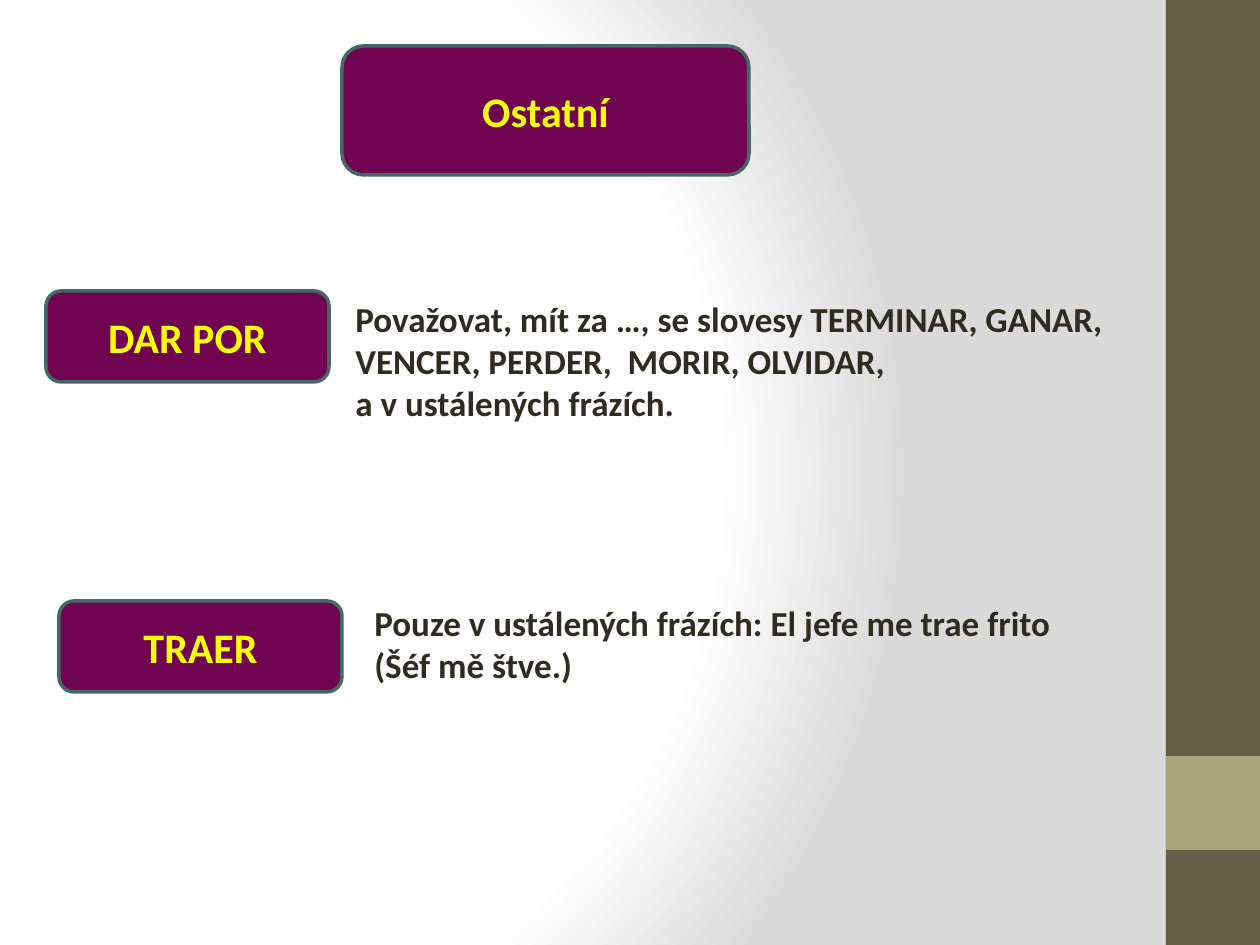
from lxml.etree import fromstring
from pptx import Presentation
from pptx.dml.color import RGBColor
from pptx.enum.shapes import MSO_SHAPE
from pptx.enum.text import MSO_ANCHOR, MSO_AUTO_SIZE, PP_ALIGN
from pptx.oxml.ns import nsdecls
from pptx.util import Pt

SCALE = 914400 / 126  # EMU per px
HUES = {
    "plum": "700451", "edge": "456867", "gold": "FFFF00", "ink": "2F2B20",
    "bark": "675E47", "moss": "A9A57C", "white": "FFFFFF", "gray": "DADADA",
}


def emu(*nums):
    return [round(n * SCALE) for n in nums]


def rgb(name):
    return RGBColor.from_string(HUES[name])


def write(frame, text, size=20, hue="ink", align=PP_ALIGN.LEFT):
    """Fill a text frame, one paragraph per line of text."""
    frame.text = text
    for para in frame.paragraphs:
        para.alignment = align
        for run in para.runs:
            font = run.font
            font.name, font.size, font.bold = "Calibri", Pt(size), True
            font.color.rgb = rgb(hue)


class Deck:
    def __init__(self, wide, high):
        self.prs = Presentation()
        self.prs.slide_width, self.prs.slide_height = emu(wide, high)
        self.slide = self.prs.slides.add_slide(self.prs.slide_layouts[6])

    def glow(self, stops, left, top, right, bottom):
        """Radial background; stops and focus are in percent."""
        marks = "".join(
            f'<a:gs pos="{pos * 1000}"><a:srgbClr val="{HUES[hue]}"/></a:gs>'
            for pos, hue in stops)
        back = fromstring(
            f'<p:bg {nsdecls("p", "a")}><p:bgPr><a:gradFill rotWithShape="1">'
            f'<a:gsLst>{marks}</a:gsLst><a:path path="circle">'
            f'<a:fillToRect l="{left * 1000}" t="{top * 1000}"'
            f' r="{right * 1000}" b="{bottom * 1000}"/></a:path>'
            '</a:gradFill><a:effectLst/></p:bgPr></p:bg>')
        self.slide.element.cSld.insert(0, back)

    def block(self, box, fill, kind=MSO_SHAPE.RECTANGLE):
        shape = self.slide.shapes.add_shape(kind, *emu(*box))
        shape.shadow.inherit = False
        shape.fill.solid()
        shape.fill.fore_color.rgb = rgb(fill)
        shape.line.fill.background()
        return shape

    def label(self, box, text):
        shape = self.block(box, "plum", MSO_SHAPE.ROUNDED_RECTANGLE)
        shape.line.color.rgb = rgb("edge")
        shape.line.width = Pt(2)
        shape.text_frame.vertical_anchor = MSO_ANCHOR.MIDDLE
        write(shape.text_frame, text, size=24, hue="gold",
              align=PP_ALIGN.CENTER)

    def note(self, box, text):
        frame = self.slide.shapes.add_textbox(*emu(*box)).text_frame
        frame.word_wrap = False
        frame.auto_size = MSO_AUTO_SIZE.SHAPE_TO_FIT_TEXT
        write(frame, text)


def main():
    deck = Deck(1260, 945)

    # Background and side band
    deck.glow([(0, "white"), (75, "white"), (100, "gray")], 20, 50, 100, 50)
    deck.block((1166, 0, 94, 945), "bark")
    deck.block((1166, 756, 94, 94), "moss")

    # Heading
    deck.label((342, 46, 407, 129), "Ostatní")

    # Verbs
    for left, top, verb in [(46, 291, "DAR POR"), (59, 601, "TRAER")]:
        deck.label((left, top, 283, 91), verb)

    # Meanings
    deck.note((343, 291, 786, 140),
              "Považovat, mít za …, se slovesy TERMINAR, GANAR,\n"
              "VENCER, PERDER,  MORIR, OLVIDAR,\n"
              "a v ustálených frázích.")
    deck.note((362, 595, 707, 97),
              "Pouze v ustálených frázích: El jefe me trae frito\n"
              "(Šéf mě štve.)")

    deck.prs.save("out.pptx")


if __name__ == "__main__":
    main()
